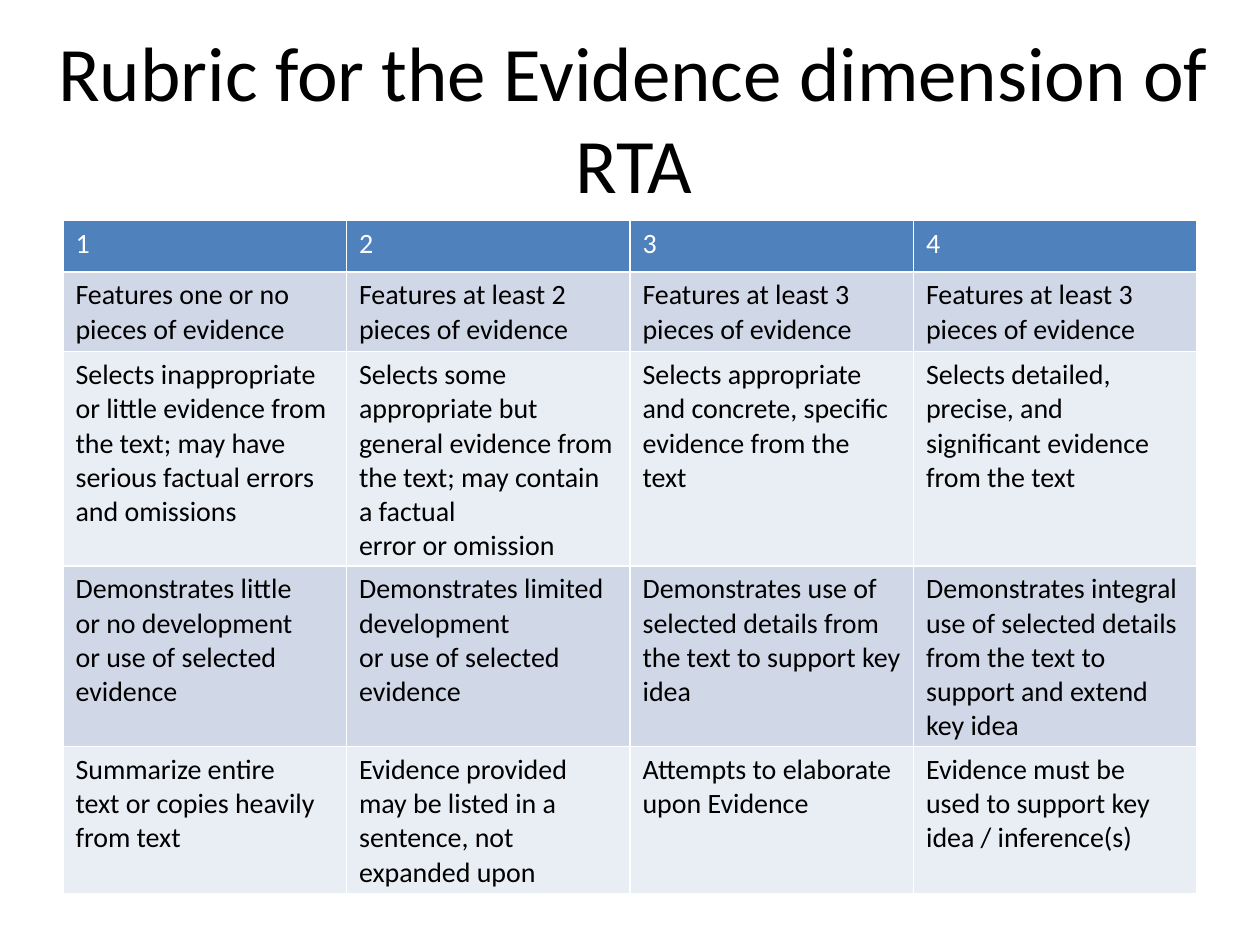
"""Build a one-slide rubric for the Evidence dimension of RTA."""
from pptx import Presentation
from pptx import util as u
from pptx.dml import color
from pptx.enum import text


def rgb(value):
    """Turn a hex string into a colour."""
    return color.RGBColor.from_string(value)


class Deck:
    """Hold the style and the current slide."""

    font = "Calibri"
    ink = "000000"
    header_ink = "FFFFFF"
    header_fill = "4F81BD"
    bands = ("D0D8E8", "E9EDF4")

    def __init__(self, width, height):
        """Start a presentation with one blank slide."""
        self.prs = Presentation()
        self.prs.slide_width, self.prs.slide_height = u.Cm(width), u.Cm(height)
        self.s = self.prs.slides.add_slide(self.prs.slide_layouts[6])

    def style(self, tf, size, ink, align=text.PP_ALIGN.LEFT):
        """Format every paragraph of a text frame."""
        for p in tf.paragraphs:
            p.alignment = align
            p.font.name = self.font
            p.font.size = u.Pt(size)
            p.font.bold = False
            p.font.color.rgb = rgb(ink)

    def title(self, words, left, top, width, height):
        """Add a centred title."""
        sp = self.s.shapes.add_textbox(*map(u.Cm, (left, top, width, height)))
        tf = sp.text_frame
        tf.word_wrap = True
        tf.vertical_anchor = text.MSO_ANCHOR.MIDDLE
        tf.text = words
        self.style(tf, 44, self.ink, text.PP_ALIGN.CENTER)

    def table(self, rows, left, top, width, row_height):
        """Add a banded table with a header row."""
        box = map(u.Cm, (left, top, width, row_height * len(rows)))
        tbl = self.s.shapes.add_table(len(rows), len(rows[0]), *box).table
        for i, row in enumerate(rows):
            fill = self.bands[(i - 1) % 2] if i else self.header_fill
            for j, words in enumerate(row):
                cell = tbl.cell(i, j)
                cell.text = words
                cell.fill.solid()
                cell.fill.fore_color.rgb = rgb(fill)
                self.style(cell.text_frame, 16, self.ink if i else self.header_ink)


RUBRIC = [
    ["1", "2", "3", "4"],
    [
        "Features one or no\npieces of evidence",
        "Features at least 2\npieces of evidence",
        "Features at least 3\npieces of evidence",
        "Features at least 3\npieces of evidence",
    ],
    [
        "Selects inappropriate or little evidence from the text; "
        "may have serious factual errors and omissions",
        "Selects some appropriate but general evidence from the text; "
        "may contain a factual\nerror or omission",
        "Selects appropriate\nand concrete, specific evidence from the\ntext",
        "Selects detailed, precise, and significant evidence from the text",
    ],
    [
        "Demonstrates little\nor no development\nor use of selected\nevidence",
        "Demonstrates limited development\nor use of selected\nevidence",
        "Demonstrates use of selected details from the text to support key idea",
        "Demonstrates integral use of selected details from the text "
        "to support and extend key idea",
    ],
    [
        "Summarize entire\ntext or copies heavily from text",
        "Evidence provided may be listed in a sentence, not expanded upon",
        "Attempts to elaborate upon Evidence",
        "Evidence must be\nused to support key\nidea / inference(s)",
    ],
]


def main():
    """Build and save the slide."""
    deck = Deck(25.4, 19.05)
    deck.title("Rubric for the Evidence dimension of RTA", 0.36, 0.76, 24.84, 3.18)
    deck.table(RUBRIC, 1.27, 4.45, 22.86, 1.03)
    deck.prs.save("out.pptx")


if __name__ == "__main__":
    main()
